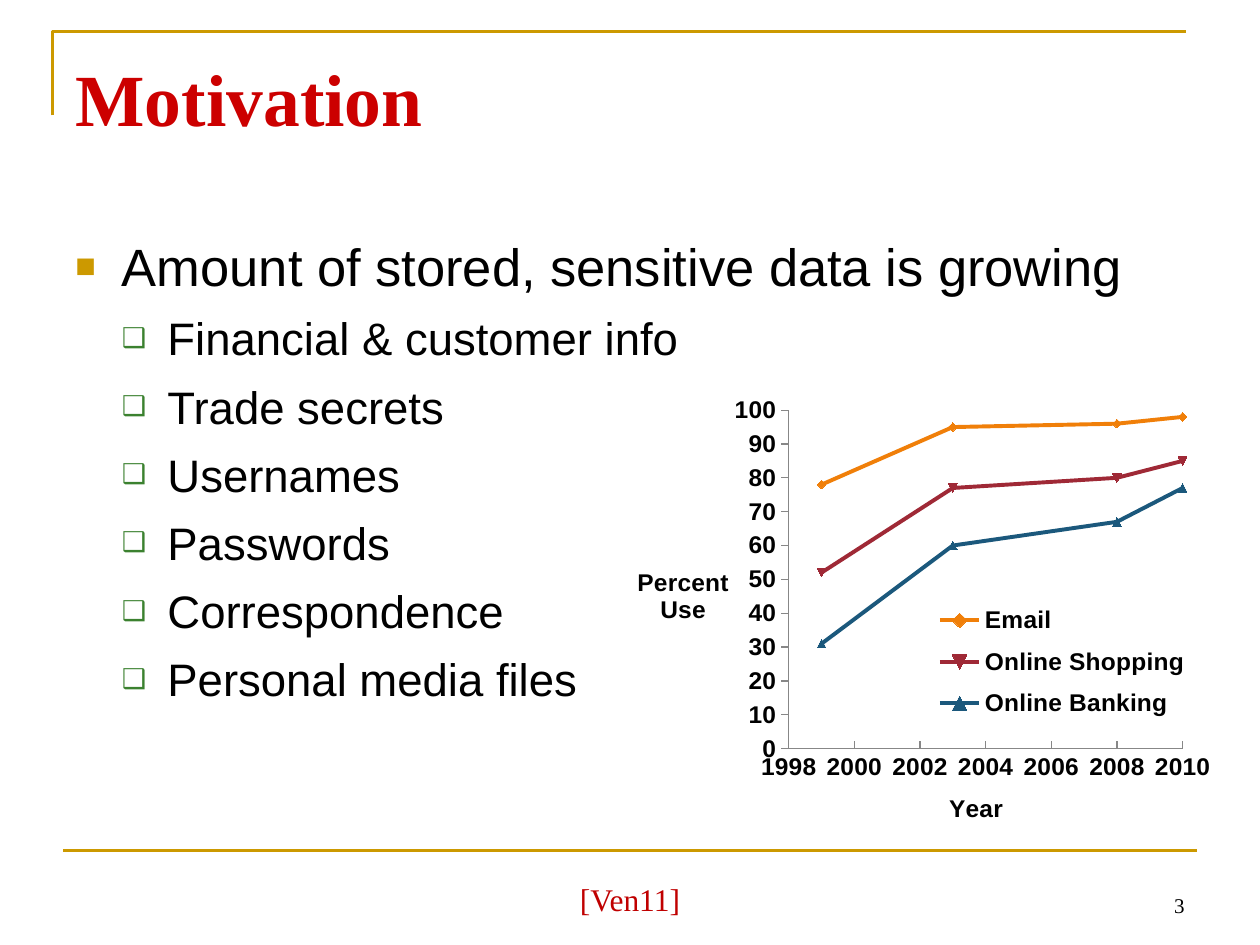
import dataclasses

import lxml.etree
import pptx
import pptx.chart.data
import pptx.dml.color
import pptx.enum.chart
import pptx.enum.shapes
import pptx.enum.text
import pptx.oxml
import pptx.oxml.ns
import pptx.util

Pt = pptx.util.Pt
qn = pptx.oxml.ns.qn
ALIGN = pptx.enum.text.PP_ALIGN
ANCHOR = pptx.enum.text.MSO_ANCHOR
TICK = pptx.enum.chart.XL_TICK_MARK
GOLD, BLACK, AXIS_GRAY = "CC9900", "000000", "878787"


@dataclasses.dataclass
class BulletStyle:
    symbol: str
    color: str
    percent: int
    level: int
    margin: float
    hanging: float
    size: float
    before: float


@dataclasses.dataclass
class UseSeries:
    name: str
    color: str
    values: tuple


@dataclasses.dataclass
class Area:
    left: float
    top: float
    width: float
    height: float


MAIN = BulletStyle("■", GOLD, 65, 0, 26.6, 26.6, 30, 0)
SUB = BulletStyle("❑", "3B812F", 60, 1, 52.6, 26, 26, 7.8)
BULLETS = [(MAIN, "Amount of stored, sensitive data is growing")] + [
    (SUB, text) for text in (
        "Financial & customer info", "Trade secrets", "Usernames",
        "Passwords", "Correspondence", "Personal media files")]
YEARS = (1999, 2003, 2008, 2010)
SERIES = [
    UseSeries("Email", "F07F09", (78, 95, 96, 98)),
    UseSeries("Online Shopping", "9F2936", (52, 77, 80, 85)),
    UseSeries("Online Banking", "1B587C", (31, 60, 67, 77)),
]


def rgb(color: str) -> pptx.dml.color.RGBColor:
    return pptx.dml.color.RGBColor.from_string(color)


def set_font(font, name: str, size: float, color: str, bold: bool = False) -> None:
    font.name, font.size, font.bold = name, Pt(size), bold
    font.color.rgb = rgb(color)


def set_line(line, color: str, width: float) -> None:
    line.color.rgb = rgb(color)
    line.width = Pt(width)


def place(shape, area: Area) -> None:
    shape.left, shape.top = Pt(area.left), Pt(area.top)
    shape.width, shape.height = Pt(area.width), Pt(area.height)


def add_box(page, area: Area):
    box = page.shapes.add_textbox(0, 0, 0, 0)
    place(box, area)
    box.text_frame.word_wrap = True
    return box


def add_frame_lines(page) -> None:
    builder = page.shapes.build_freeform(Pt(30), Pt(66), scale=1.0)
    builder.add_line_segments([(Pt(30), Pt(18)), (Pt(678), Pt(18))], close=False)
    corner = builder.convert_to_shape()
    corner.fill.background()
    corner.shadow.inherit = False
    set_line(corner.line, GOLD, 1.5)
    rule = page.shapes.add_connector(
        pptx.enum.shapes.MSO_CONNECTOR.STRAIGHT, Pt(36), Pt(486), Pt(684), Pt(486))
    set_line(rule.line, GOLD, 1.5)
    lxml.etree.SubElement(rule._element.spPr, qn("a:effectLst"))


def add_title(page, text: str) -> None:
    title = page.shapes.title
    place(title, Area(36, 21.6, 648, 108))
    frame = title.text_frame
    frame.text = text
    frame.vertical_anchor = ANCHOR.TOP
    frame.margin_top = Pt(8.4)
    para = frame.paragraphs[0]
    para.alignment = ALIGN.LEFT
    set_font(para.runs[0].font, "Times New Roman", 42, "CC0000", True)


def add_bullet(para, style: BulletStyle, text: str) -> None:
    para.text = text
    para.level = style.level
    para.space_before = Pt(style.before)
    props = para._p.get_or_add_pPr()
    props.set("marL", str(int(Pt(style.margin))))
    props.set("indent", str(-int(Pt(style.hanging))))
    color = lxml.etree.SubElement(props, qn("a:buClr"))
    lxml.etree.SubElement(color, qn("a:srgbClr"), val=style.color)
    lxml.etree.SubElement(props, qn("a:buSzPct"), val=str(style.percent * 1000))
    lxml.etree.SubElement(props, qn("a:buFont"), typeface="Arial")
    lxml.etree.SubElement(props, qn("a:buChar"), char=style.symbol)
    set_font(para.runs[0].font, "Arial", style.size, BLACK)


def add_bullets(page) -> None:
    frame = add_box(page, Area(36, 126, 642, 356.4)).text_frame
    frame.margin_top = Pt(7.6)
    for index, (style, text) in enumerate(BULLETS):
        para = frame.add_paragraph() if index else frame.paragraphs[0]
        add_bullet(para, style, text)


def add_footer(page, area: Area, text: str, align, size: float, color: str) -> None:
    frame = add_box(page, area).text_frame
    frame.text = text
    frame.vertical_anchor = ANCHOR.BOTTOM
    frame.paragraphs[0].alignment = align
    set_font(frame.paragraphs[0].runs[0].font, "Times New Roman", size, color)


def set_layout(element, inner: bool = False, **fractions: float) -> None:
    """Give a chart part a manual layout, in fractions of the chart."""
    layout = element.find(qn("c:layout"))
    if layout is None:
        layout = pptx.oxml.parse_xml(f"<c:layout {pptx.oxml.ns.nsdecls('c')}/>")
        before = [child for child in element if child.tag in (
            qn("c:tx"), qn("c:legendPos"), qn("c:legendEntry"))]
        element.insert(len(before), layout)
    for child in list(layout):
        layout.remove(child)
    manual = lxml.etree.SubElement(layout, qn("c:manualLayout"))
    if inner:
        lxml.etree.SubElement(manual, qn("c:layoutTarget"), val="inner")
    for side in ("x", "y"):
        lxml.etree.SubElement(manual, qn(f"c:{side}Mode"), val="edge")
    for name, value in fractions.items():
        lxml.etree.SubElement(manual, qn(f"c:{name}"), val=str(value))


def format_axis(axis, title: str, low: int, high: int, step: int, tick,
                x: float, y: float) -> None:
    axis.minimum_scale, axis.maximum_scale, axis.major_unit = low, high, step
    axis.has_major_gridlines = False
    axis.major_tick_mark, axis.minor_tick_mark = tick, TICK.NONE
    axis.tick_labels.number_format = "General"
    axis.tick_labels.number_format_is_linked = False
    set_font(axis.tick_labels.font, "Arial", 14, BLACK, True)
    set_line(axis.format.line, AXIS_GRAY, 0.75)
    frame = axis.axis_title.text_frame
    frame.text = title
    set_font(frame.paragraphs[0].runs[0].font, "Arial", 14, BLACK, True)
    frame._txBody.bodyPr.set("rot", "0")
    frame._txBody.bodyPr.set("vert", "horz")
    set_layout(axis.axis_title._element, x=x, y=y)


def add_use_chart(page) -> None:
    data = pptx.chart.data.XyChartData()
    for item in SERIES:
        points = data.add_series(item.name)
        for year, value in zip(YEARS, item.values):
            points.add_data_point(year, value)
    chart = page.shapes.add_chart(
        pptx.enum.chart.XL_CHART_TYPE.XY_SCATTER_LINES,
        Pt(360), Pt(222), Pt(336), Pt(252), data).chart
    chart.has_title = False
    set_font(chart.font, "Arial", 14, BLACK, True)
    chart.plots[0].vary_by_categories = False
    for number, (series, item) in enumerate(zip(chart.plots[0].series, SERIES), 1):
        # Automatic markers follow the index: diamond, then the triangles
        series._element.find(qn("c:idx")).set("val", str(number))
        series.smooth = False
        set_line(series.format.line, item.color, 2.25)
        series.marker.size = 5
        series.marker.format.fill.solid()
        series.marker.format.fill.fore_color.rgb = rgb(item.color)
        set_line(series.marker.format.line, item.color, 0.75)
    format_axis(chart.category_axis, "Year", 1998, 2010, 2, TICK.INSIDE, 0.535, 0.92)
    format_axis(chart.value_axis, "Percent Use", 0, 100, 10, TICK.OUTSIDE, 0.005, 0.4)
    chart.has_legend = True
    chart.legend.position = pptx.enum.chart.XL_LEGEND_POSITION.RIGHT
    chart.legend.include_in_layout = False
    set_font(chart.legend.font, "Arial", 14, BLACK, True)
    set_layout(chart.legend._element, x=0.51, y=0.47, w=0.45, h=0.32)
    plot_area = chart._chartSpace.chart.plotArea
    set_layout(plot_area, inner=True, x=0.27, y=0.05, w=0.67, h=0.78)


def main() -> None:
    deck = pptx.Presentation()
    deck.slide_width, deck.slide_height = Pt(720), Pt(540)
    page = deck.slides.add_slide(deck.slide_layouts.get_by_name("Title Only"))
    add_frame_lines(page)
    add_title(page, "Motivation")
    add_bullets(page)
    # Citation and page number
    add_footer(page, Area(246, 492, 228, 36), "[Ven11]", ALIGN.CENTER, 18, "C00000")
    add_footer(page, Area(516, 492, 168, 36), "3", ALIGN.RIGHT, 12, BLACK)
    add_use_chart(page)
    deck.save("out.pptx")


if __name__ == "__main__":
    main()
